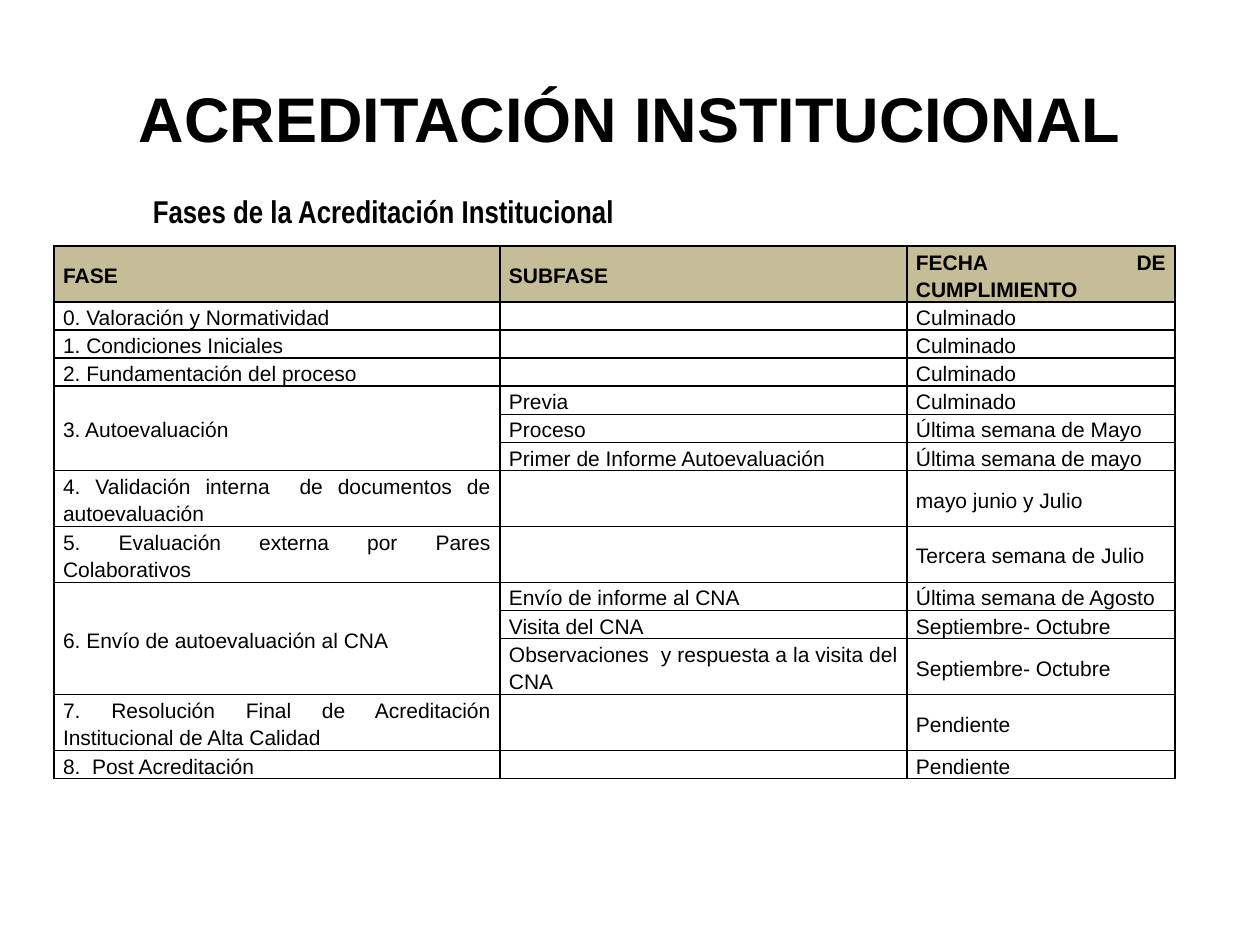
from lxml import etree
from pptx import Presentation
from pptx.dml.color import RGBColor
from pptx.enum.text import MSO_ANCHOR, MSO_AUTO_SIZE, PP_ALIGN
from pptx.oxml.ns import qn
from pptx.util import Pt

PX = 914400 // 126
MIDDLE = MSO_ANCHOR.MIDDLE
CENTER, JUSTIFY = PP_ALIGN.CENTER, PP_ALIGN.JUSTIFY
GROW = MSO_AUTO_SIZE.SHAPE_TO_FIT_TEXT


def style(p, size, align, bold=True, name="Arial"):
    p.alignment = align
    p.font.name = name
    p.font.size = Pt(size)
    p.font.bold = bold
    p.font.color.rgb = RGBColor.from_string("000000")


def add_borders(cell):
    tcPr = cell._tc.get_or_add_tcPr()
    for i, side in enumerate(("lnL", "lnR", "lnT", "lnB")):
        ln = etree.Element(qn(f"a:{side}"), w=str(Pt(1)))
        fill = etree.SubElement(ln, qn("a:solidFill"))
        etree.SubElement(fill, qn("a:srgbClr"), val="000000")
        tcPr.insert(i, ln)


prs = Presentation()
prs.slide_width, prs.slide_height = 1260 * PX, 945 * PX
s = prs.slides.add_slide(prs.slide_layouts[5])

title = s.shapes.title
title.left, title.top, title.width, title.height = 63 * PX, 38 * PX, 1134 * PX, 158 * PX
tf = title.text_frame
tf.text = "ACREDITACIÓN INSTITUCIONAL"
tf.vertical_anchor = MIDDLE
tf.margin_left = tf.margin_right = tf.margin_top = tf.margin_bottom = 0
style(tf.paragraphs[0], 36, CENTER)

rows = [
    ("FASE", "SUBFASE", "FECHA DE CUMPLIMIENTO"),
    ("0. Valoración y Normatividad", "", "Culminado"),
    ("1. Condiciones Iniciales", "", "Culminado"),
    ("2. Fundamentación del proceso", "", "Culminado"),
    ("3. Autoevaluación", "Previa", "Culminado"),
    ("", "Proceso", "Última semana de Mayo"),
    ("", "Primer de Informe Autoevaluación", "Última semana de mayo"),
    ("4. Validación interna  de documentos de autoevaluación", "", "mayo junio y Julio"),
    ("5. Evaluación externa por Pares Colaborativos", "", "Tercera semana de Julio"),
    ("6. Envío de autoevaluación al CNA", "Envío de informe al CNA", "Última semana de Agosto"),
    ("", "Visita del CNA", "Septiembre- Octubre"),
    ("", "Observaciones  y respuesta a la visita del CNA", "Septiembre- Octubre"),
    ("7. Resolución Final de Acreditación Institucional de Alta Calidad", "", "Pendiente"),
    ("8.  Post Acreditación", "", "Pendiente"),
]
two_line_rows = {0, 7, 8, 11, 12}
widths = [446, 407, 268]

frame = s.shapes.add_table(len(rows), 3, 54 * PX, 246 * PX, sum(widths) * PX, 532 * PX)
table = frame.table
table.first_row = table.horz_banding = False
for col, width in zip(table.columns, widths):
    col.width = width * PX

for i, texts in enumerate(rows):
    table.rows[i].height = (56 if i in two_line_rows else 28) * PX
    for j, text in enumerate(texts):
        cell = table.cell(i, j)
        cell.vertical_anchor = MIDDLE
        cell.margin_left = cell.margin_right = 9 * PX
        cell.margin_top, cell.margin_bottom = PX, 0
        if i == 0:
            cell.fill.solid()
            cell.fill.fore_color.rgb = RGBColor.from_string("C4BD97")
        else:
            cell.fill.background()
        add_borders(cell)
        p = cell.text_frame.paragraphs[0]
        p.line_spacing = 1.15
        if text:
            p.text = text
            style(p, 12, JUSTIFY, bold=i == 0)
        else:
            etree.SubElement(p._p, qn("a:endParaRPr"), sz="1200")

for first in (4, 9):
    table.cell(first, 0).merge(table.cell(first + 2, 0))

sp = s.shapes.add_textbox(137 * PX, 180 * PX, 493 * PX, 54 * PX)
tf = sp.text_frame
tf.word_wrap = False
tf.auto_size = GROW
p = tf.paragraphs[0]
p.text = "Fases de la Acreditación Institucional"
p.line_spacing = 1.15
style(p, 18, CENTER, name="Arial Narrow")

prs.save("out.pptx")
